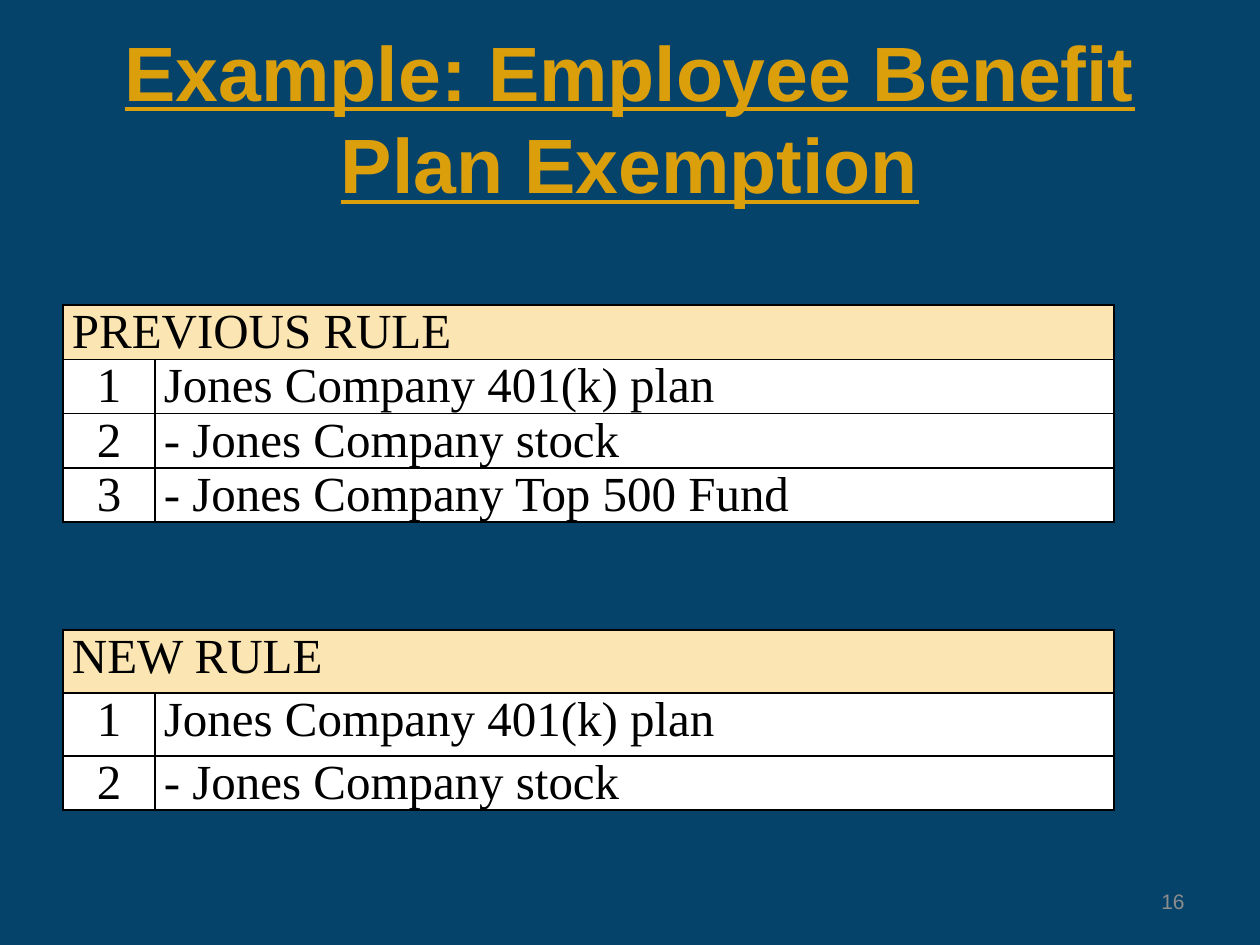
from dataclasses import dataclass

from lxml import etree
from pptx import Presentation
from pptx.dml.color import RGBColor
from pptx.enum.text import MSO_ANCHOR, PP_ALIGN
from pptx.oxml.ns import qn
from pptx.util import Pt

LEFT, CENTER, RIGHT = PP_ALIGN.LEFT, PP_ALIGN.CENTER, PP_ALIGN.RIGHT
MIDDLE = MSO_ANCHOR.MIDDLE
EMU_PER_PX = 914400 // 126
TITLE_ONLY = 5


@dataclass(frozen=True)
class Theme:
    background: str = "06436B"
    gold: str = "DC9F0C"
    header: str = "FBE6B3"
    white: str = "FFFFFF"
    black: str = "000000"
    gray: str = "8C8C8C"
    heading_font: str = "Arial"
    table_font: str = "Times New Roman"
    title_size: int = 44
    table_size: int = 28
    number_size: int = 12


THEME = Theme()


def px(value):
    return value * EMU_PER_PX


def add_text(frame, text, font, size, color, align, emphasis=False):
    paragraph = frame.paragraphs[0]
    paragraph.alignment = align
    run = paragraph.add_run()
    run.text = text
    run.font.name = font
    run.font.size = Pt(size)
    run.font.bold = emphasis
    run.font.underline = emphasis
    run.font.color.rgb = RGBColor.from_string(color)


def place(shape, left, top, width, height):
    shape.left, shape.top = px(left), px(top)
    shape.width, shape.height = px(width), px(height)


def add_title(slide, text):
    title = slide.shapes.title
    place(title, 63, 38, 1134, 157)
    title.text_frame.vertical_anchor = MIDDLE
    add_text(title.text_frame, text, THEME.heading_font, THEME.title_size,
             THEME.gold, CENTER, emphasis=True)


def add_slide_number(slide, text):
    box = slide.shapes.add_textbox(px(903), px(876), px(294), px(50))
    box.text_frame.word_wrap = True
    box.text_frame.vertical_anchor = MIDDLE
    add_text(box.text_frame, text, THEME.heading_font, THEME.number_size,
             THEME.gray, RIGHT)


def set_borders(cell):
    properties = cell._tc.get_or_add_tcPr()
    for position, side in enumerate(("a:lnL", "a:lnR", "a:lnT", "a:lnB")):
        line = etree.Element(qn(side), w=str(Pt(1)))
        fill = etree.SubElement(line, qn("a:solidFill"))
        etree.SubElement(fill, qn("a:srgbClr"), val=THEME.black)
        properties.insert(position, line)


def format_cell(cell, fill):
    cell.margin_left = cell.margin_right = px(9)
    cell.margin_top = cell.margin_bottom = 0
    cell.fill.solid()
    cell.fill.fore_color.rgb = RGBColor.from_string(fill)
    set_borders(cell)


def write_cell(cell, text, align=LEFT):
    add_text(cell.text_frame, text, THEME.table_font, THEME.table_size,
             THEME.black, align)


def add_rule_table(slide, top, heading, entries, row_heights):
    column_widths = (92, 959)
    frame = slide.shapes.add_table(
        len(row_heights), len(column_widths), px(63), px(top),
        px(sum(column_widths)), px(sum(row_heights)))
    table = frame.table
    for column, width in zip(table.columns, column_widths):
        column.width = px(width)
    for index, (row, height) in enumerate(zip(table.rows, row_heights)):
        row.height = px(height)
        for cell in row.cells:
            format_cell(cell, THEME.white if index else THEME.header)
    table.cell(0, 0).merge(table.cell(0, 1))
    write_cell(table.cell(0, 0), heading)
    for number, entry in enumerate(entries, start=1):
        write_cell(table.cell(number, 0), str(number), CENTER)
        write_cell(table.cell(number, 1), entry)


def main():
    presentation = Presentation()
    presentation.slide_width, presentation.slide_height = px(1260), px(945)
    slide = presentation.slides.add_slide(presentation.slide_layouts[TITLE_ONLY])
    background = slide.background.fill
    background.solid()
    background.fore_color.rgb = RGBColor.from_string(THEME.background)

    add_title(slide, "Example: Employee Benefit Plan Exemption")
    shared = ["Jones Company 401(k) plan", "- Jones Company stock"]
    add_rule_table(slide, 305, "PREVIOUS RULE",
                   shared + ["- Jones Company Top 500 Fund"], (54, 54, 54, 54))
    add_rule_table(slide, 630, "NEW RULE", shared, (63, 63, 54))
    add_slide_number(slide, "16")
    presentation.save("out.pptx")


if __name__ == "__main__":
    main()
